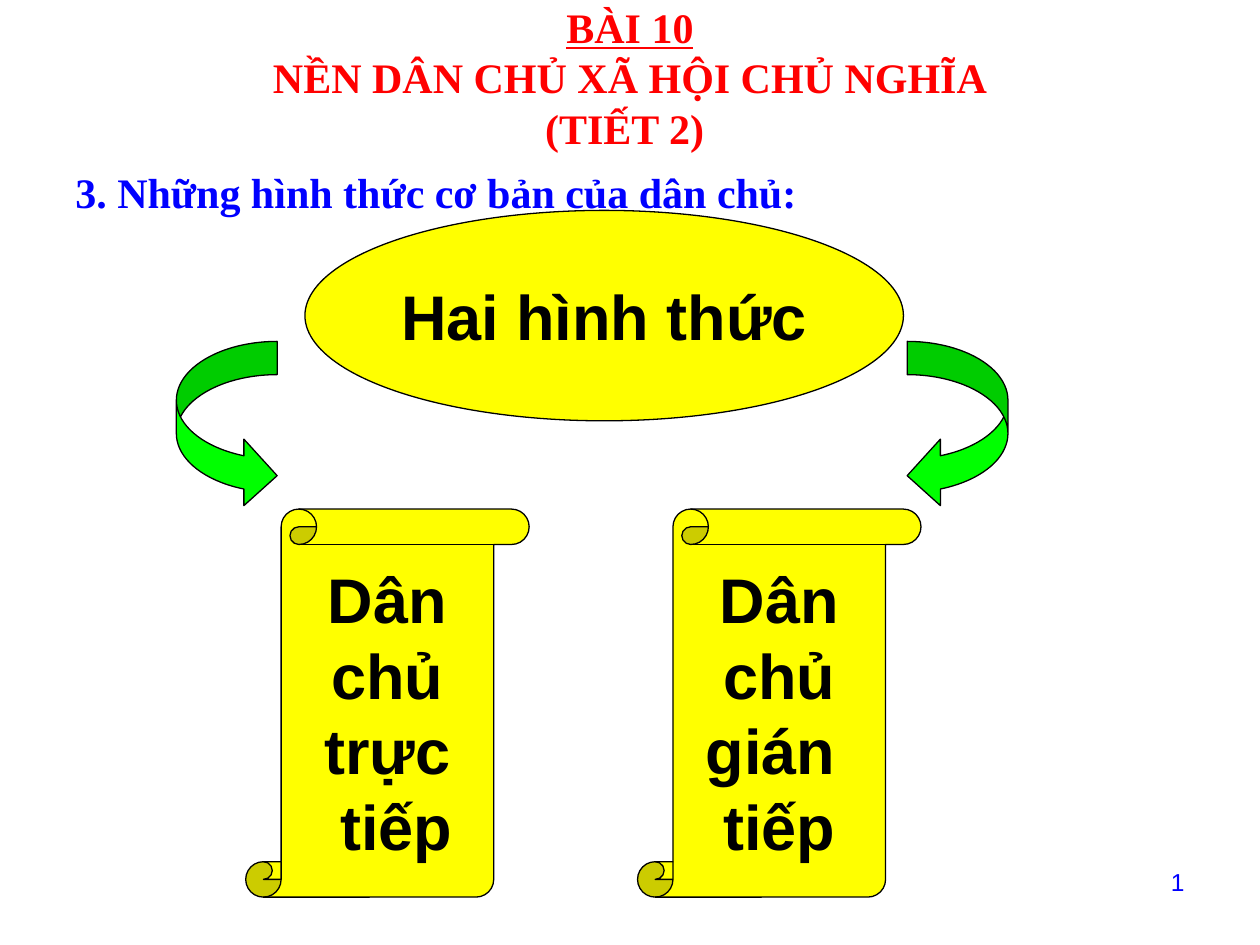
from pptx import Presentation
from pptx.dml.color import RGBColor
from pptx.enum.shapes import MSO_SHAPE as Shape
from pptx.enum.text import MSO_ANCHOR as Anchor, MSO_AUTO_SIZE as AutoSize, PP_ALIGN as Align
from pptx.util import Inches, Pt

RED, BLUE, BLACK, YELLOW, GREEN = "FF0000", "0000FF", "000000", "FFFF00", "00FF00"
TITLE = ["BÀI 10", "NỀN DÂN CHỦ XÃ HỘI CHỦ NGHĨA", "(TIẾT 2) "]
HEADING = "3. Những hình thức cơ bản của dân chủ:"
TOPIC = "Hai hình thức"
FORMS = [
    (1.95, ["Dân", " chủ ", "trực", " tiếp"]),
    (5.06, ["Dân", " chủ ", "gián ", "tiếp"]),
]
ARROWS = [(1.4, Shape.CURVED_RIGHT_ARROW), (7.2, Shape.CURVED_LEFT_ARROW)]

TITLE_FONT = {"name": "Times New Roman", "size": Pt(24), "bold": True}
LABEL_FONT = {"name": "Arial", "size": Pt(36), "bold": True}
NUMBER_FONT = {"name": "Arial", "size": Pt(14)}


def rgb(value):
    return RGBColor.from_string(value)


def add_span(para, text, font, color):
    span = para.add_run()
    span.text = text
    for name, value in font.items():
        setattr(span.font, name, value)
    span.font.color.rgb = rgb(color)
    return span


def add_text(slide, area, text, font, color, align):
    box = slide.shapes.add_textbox(*map(Inches, area))
    box.text_frame.word_wrap = True
    para = box.text_frame.paragraphs[0]
    para.alignment = align
    add_span(para, text, font, color)
    return para


def add_figure(slide, kind, area, fill, lines=(), adjustments=()):
    """Add an outlined preset shape with one centred paragraph per line."""
    figure = slide.shapes.add_shape(kind, *map(Inches, area))
    figure.shadow.inherit = False
    figure.fill.solid()
    figure.fill.fore_color.rgb = rgb(fill)
    figure.line.color.rgb = rgb(BLACK)
    figure.line.width = Pt(0.75)
    for index, value in enumerate(adjustments):
        figure.adjustments[index] = value
    frame = figure.text_frame
    frame.word_wrap = False
    frame.vertical_anchor = Anchor.MIDDLE
    for index, line in enumerate(lines):
        para = frame.add_paragraph() if index else frame.paragraphs[0]
        para.alignment = Align.CENTER
        add_span(para, line, LABEL_FONT, BLACK)


def fill_title(title):
    title.left, title.top, title.width, title.height = map(Inches, (0.5, 0.3, 9, 0.62))
    frame = title.text_frame
    frame.auto_size = AutoSize.NONE
    frame.vertical_anchor = Anchor.MIDDLE
    para = frame.paragraphs[0]
    para.alignment = Align.CENTER
    for index, line in enumerate(TITLE):
        if index:
            para.add_line_break()
        add_span(para, line, TITLE_FONT, RED).font.underline = index == 0


def main():
    deck = Presentation()
    deck.slide_width, deck.slide_height = Inches(10), Inches(7.5)
    slide = deck.slides.add_slide(deck.slide_layouts[5])

    fill_title(slide.shapes.title)
    add_text(slide, (7.17, 6.83, 2.33, 0.52), "1", NUMBER_FONT, BLUE, Align.RIGHT)
    heading = add_text(slide, (0.5, 1.27, 9, 0.55), HEADING, TITLE_FONT, BLUE, Align.LEFT)
    heading.space_before = Pt(5)

    add_figure(slide, Shape.OVAL, (2.42, 1.67, 4.75, 1.67), YELLOW, [TOPIC])
    for left, kind in ARROWS:
        add_figure(slide, kind, (left, 2.71, 0.8, 1.33), GREEN,
                   adjustments=(0.33, 0.66, 0.33))
    for left, lines in FORMS:
        add_figure(slide, Shape.VERTICAL_SCROLL, (left, 4.04, 2.25, 3.08), YELLOW, lines)

    deck.save("out.pptx")


if __name__ == "__main__":
    main()
